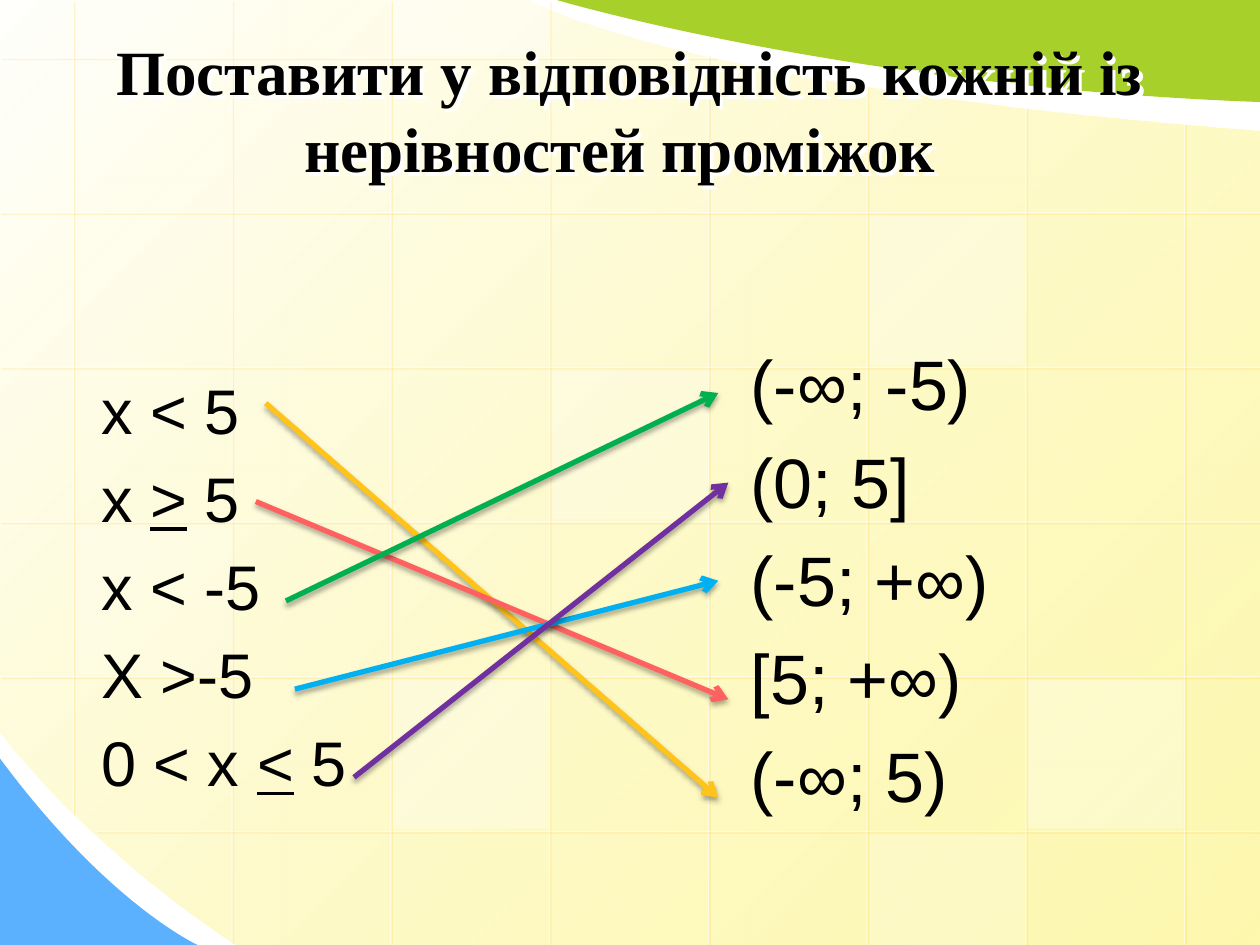
import pptx
import pptx.dml.color
import pptx.enum.shapes
import pptx.enum.text
import pptx.oxml.ns
import pptx.util
import lxml.etree

Pt = pptx.util.Pt
RGB = pptx.dml.color.RGBColor.from_string
qn = pptx.oxml.ns.qn

THEME = {
    "white": "FFFFFF", "text": "000000", "blue": "5CB1FE", "green": "A8D02A",
    "bg": ("FFFFFC", "FDF58D"),
    "arrows": ("FFC319", "FF6161", "00B050", "00B0F0", "7030A0"),
    "grid_shadow": ("FFC319", 35, 0, 1.4, 45),
    "arrow_shadow": ("000000", 35, 3.1, 1.8, 90),
    "title_shadow": ("FFFFFF", 100, 0, 2.8, 45),
    "body_font": "Arial", "title_font": "Times New Roman",
    "title": 36, "title_gap": 40, "left": 36, "right": 40,
}


def set_alpha(parent, percent):
    for color in parent.iter(qn("a:srgbClr")):
        lxml.etree.SubElement(color, qn("a:alpha"), val=str(percent * 1000))


def make_effects(shadow):
    effects = lxml.etree.Element(qn("a:effectLst"))
    color, alpha, blur, dist, angle = shadow
    outer = lxml.etree.SubElement(
        effects, qn("a:outerShdw"), blurRad=str(Pt(blur)), dist=str(Pt(dist)),
        dir=str(angle * 60000), algn="ctr", rotWithShape="0")
    lxml.etree.SubElement(outer, qn("a:srgbClr"), val=color)
    set_alpha(outer, alpha)
    return effects


prs = pptx.Presentation()
prs.slide_width, prs.slide_height = Pt(720), Pt(540)
s = prs.slides.add_slide(prs.slide_layouts[6])

outlines = [
    ("bg", [(720, 75), (720, 540), (134.6, 540),
            (38.9, 475.2, 0.7, 417.6, 0, 418), (0, 0), (302.4, 0),
            (302.4, 0.7, 385.9, 49.7, 720, 75)]),
    ("blue", [(0, 433.4), (0, 540), (113, 540), (113, 540, 61.9, 517, 0, 433.4)]),
    ("green", [(720, 58.3), (720, 0), (318.2, 0), (318.2, 0, 485.3, 49.7, 720, 58.3)]),
]
shapes = {}
for name, steps in outlines:
    points = [(Pt(step[-2]), Pt(step[-1])) for step in steps]
    builder = s.shapes.build_freeform(*points[0], scale=1.0)
    builder.add_line_segments(points[1:], close=False)
    sp = builder.convert_to_shape()
    segments = list(sp._element.iter(qn("a:lnTo")))
    for segment, step in zip(segments, steps[1:]):
        if len(step) == 6:
            curve = lxml.etree.Element(qn("a:cubicBezTo"))
            for x, y in zip(step[::2], step[1::2]):
                lxml.etree.SubElement(curve, qn("a:pt"),
                                      x=str(Pt(x) - sp.left), y=str(Pt(y) - sp.top))
            segment.getparent().replace(segment, curve)
    lxml.etree.SubElement(next(sp._element.iter(qn("a:path"))), qn("a:close"))
    sp.shadow.inherit = False
    sp.line.fill.background()
    if name == "bg":
        sp.fill.gradient()
        sp.fill.gradient_angle = 315
        for stop, color, position in zip(sp.fill.gradient_stops, THEME["bg"], (0, 1)):
            stop.color.rgb = RGB(color)
            stop.position = position
        set_alpha(sp._element.spPr.findall(".//" + qn("a:gs"))[1], 70)
    else:
        sp.fill.solid()
        sp.fill.fore_color.rgb = RGB(THEME[name])
    shapes[name] = sp

col_x = [41.8 + 90.72 * i for i in range(8)]
row_y = [33.1 + 88.4 * i for i in range(6)]
col_tops = (0, 0, 0, 0, 31, 49, 61.2, 70.6)
col_ends = (465, 538) + (540,) * 6
row_lefts = (0,) * 5 + (54.7,)
row_ends = (409,) + (720,) * 5
grid = [(x, top, x, end) for x, top, end in zip(col_x, col_tops, col_ends)]
grid += [(end, y, left, y) for y, left, end in zip(row_y, row_lefts, row_ends)]
for ends in grid:
    line = s.shapes.add_connector(pptx.enum.shapes.MSO_CONNECTOR.STRAIGHT, *map(Pt, ends))
    line.line.width = Pt(0.75)
    line.line.color.rgb = RGB(THEME["white"])
    set_alpha(line._element.spPr, 50)
    line._element.spPr.append(make_effects(THEME["grid_shadow"]))

cells = [(3, 2, 25), (6, 4, 30), (0, 3, 20), (5, 5, 20), (2, -1, 40), (2, 4, 30), (5, 1, 30)]
for col, row, opacity in cells:
    y = row_y[0] + 88.4 * row + 1.8
    top, bottom = max(0, y), min(540, y + 85)
    sp = s.shapes.add_shape(pptx.enum.shapes.MSO_SHAPE.RECTANGLE,
                            Pt(col_x[col] + 1.4), Pt(top), Pt(88.6), Pt(bottom - top))
    sp.shadow.inherit = False
    sp.line.fill.background()
    sp.fill.solid()
    sp.fill.fore_color.rgb = RGB(THEME["white"])
    set_alpha(sp._element.spPr, opacity)
s.shapes._spTree.append(shapes["green"]._element)

sp = s.shapes.add_textbox(Pt(12.2), Pt(7.9), Pt(684), Pt(105.1))
sp._element.spPr.append(make_effects(THEME["title_shadow"]))
tf = sp.text_frame
tf.word_wrap = True
tf.vertical_anchor = pptx.enum.text.MSO_ANCHOR.MIDDLE
p = tf.paragraphs[0]
p.alignment = pptx.enum.text.PP_ALIGN.CENTER
title_runs = [
    (" ", {"size": Pt(THEME["title_gap"]), "name": THEME["body_font"], "bold": True}),
    ("Поставити у відповідність кожній із нерівностей проміжок",
     {"size": Pt(THEME["title"]), "name": THEME["title_font"], "bold": True}),
]
for text, fmt in title_runs:
    r = p.add_run()
    r.text = text
    for key, value in fmt.items():
        setattr(r.font, key, value)
    r.font.color.rgb = RGB(THEME["text"])

lists = [
    ((50.8, 157.7, 318.2, 356.4), 54.3, 48.2, THEME["left"],
     [["х < 5"], ["x ", ">", " 5"], ["x < -5"], ["X >-5"], ["0 < x ", "<", " 5"]]),
    ((421.9, 191.5, 281.5, 322.6), 3.1, 27.4, THEME["right"],
     [["(-∞; -5)"], ["(0; 5]"], ["(-5; +∞)"], ["[5; +∞)"], ["(-∞; 5)"]]),
]
for box, inset, indent, size, items in lists:
    tf = s.shapes.add_textbox(*map(Pt, box)).text_frame
    tf.word_wrap = True
    tf.margin_top = Pt(inset)
    for i, parts in enumerate(items):
        p = tf.add_paragraph() if i else tf.paragraphs[0]
        p.space_before = Pt(size / 5 if i else 0)
        pPr = p._p.get_or_add_pPr()
        pPr.set("marL", str(Pt(indent)))
        pPr.set("indent", str(-Pt(indent)))
        for text in parts:
            r = p.add_run()
            r.text = text
            fmt = {"size": Pt(size), "name": THEME["body_font"], "underline": text in "<>"}
            for key, value in fmt.items():
                setattr(r.font, key, value)
            r.font.color.rgb = RGB(THEME["text"])

arrows = [(151.9, 230.4, 410.4, 455.8), (146.2, 286.6, 416.2, 399.6),
          (163.4, 343.4, 410.4, 224.6), (168.5, 393.8, 410.4, 331.9),
          (202.3, 444.2, 416.2, 275.8)]
for ends, color in zip(arrows, THEME["arrows"]):
    line = s.shapes.add_connector(pptx.enum.shapes.MSO_CONNECTOR.STRAIGHT, *map(Pt, ends))
    line.line.width = Pt(3)
    line.line.color.rgb = RGB(color)
    lxml.etree.SubElement(line.line._get_or_add_ln(), qn("a:tailEnd"), type="arrow")
    line._element.spPr.append(make_effects(THEME["arrow_shadow"]))

prs.save("out.pptx")
